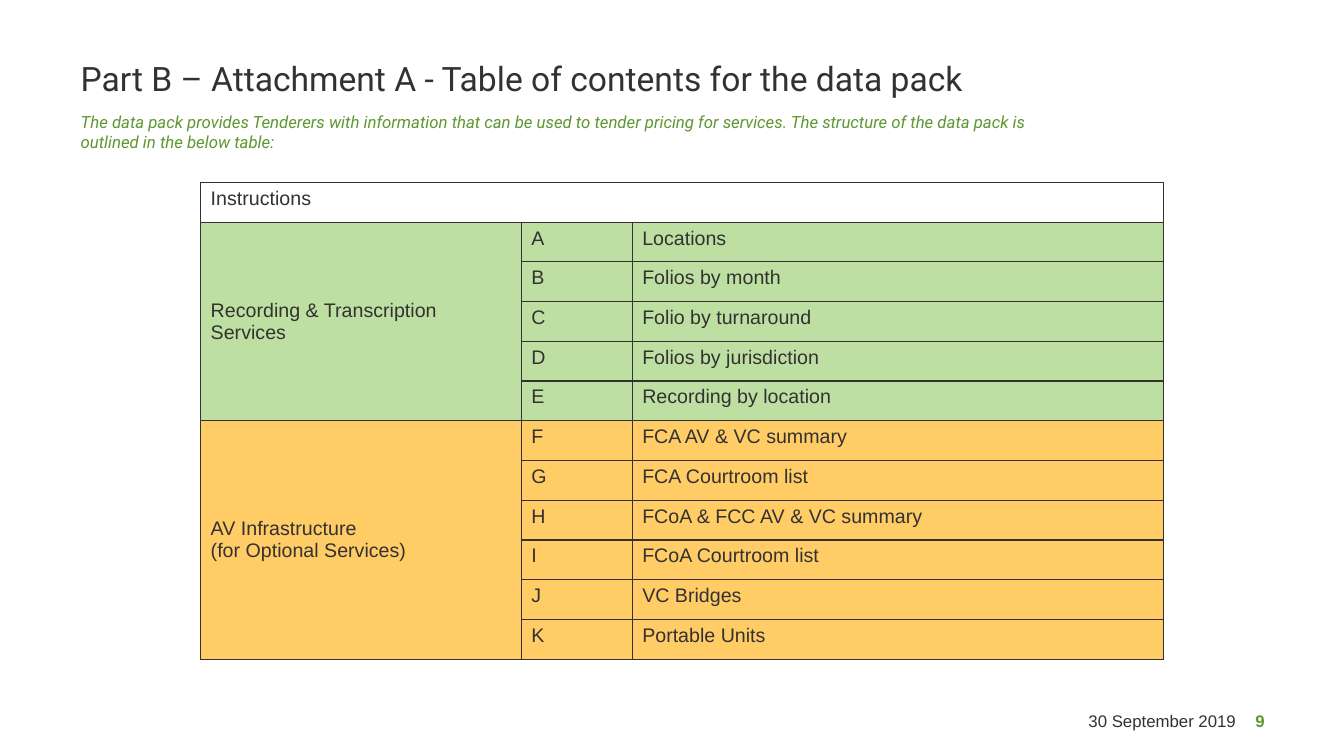
from pptx import Presentation
from pptx.dml.color import RGBColor
from pptx.enum.text import MSO_ANCHOR as Anchor, MSO_AUTO_SIZE as AutoSize, PP_ALIGN as Align
from pptx.oxml import parse_xml
from pptx.oxml.ns import nsdecls
from pptx.util import Inches, Pt

DARK = RGBColor(0x33, 0x31, 0x32)
GREEN = RGBColor(0x5E, 0x97, 0x32)
LIGHT_GREEN = RGBColor(0xBD, 0xE0, 0xA2)
AMBER = RGBColor(0xFF, 0xCC, 0x66)
WHITE = RGBColor(0xFF, 0xFF, 0xFF)

TABLE_HEIGHT = 4.73
COLUMN_WIDTHS = (3.18, 1.1, 5.27)
SECTIONS = [
    ("Recording & Transcription Services", LIGHT_GREEN, [
        "Locations", "Folios by month", "Folio by turnaround",
        "Folios by jurisdiction", "Recording by location"]),
    ("AV Infrastructure\n(for Optional Services)", AMBER, [
        "FCA AV & VC summary", "FCA Courtroom list", "FCoA & FCC AV & VC summary",
        "FCoA Courtroom list", "VC Bridges", "Portable Units"]),
]


def write_text(frame, text, size=12, font="Arial", color=DARK, bold=False,
               italic=False, align=Align.LEFT, anchor=Anchor.TOP, spacing=None):
    frame.text = text
    frame.vertical_anchor = anchor
    for para in frame.paragraphs:
        para.alignment = align
        para.line_spacing = spacing
        for span in para.runs:
            span.font.name = font
            span.font.size = Pt(size)
            span.font.bold = bold
            span.font.italic = italic
            span.font.color.rgb = color


def set_frame(frame, right=0):
    frame.word_wrap = True
    frame.auto_size = AutoSize.NONE
    frame.margin_left = frame.margin_top = frame.margin_bottom = 0
    frame.margin_right = Inches(right)


def add_title(page, text):
    title = page.shapes.title
    title.left, title.top = Inches(0.8), Inches(0.41)
    title.width, title.height = Inches(9.56), Inches(0.57)
    set_frame(title.text_frame)
    write_text(title.text_frame, text, size=24, font="Roboto",
               anchor=Anchor.BOTTOM, spacing=0.9)


def add_text(page, text, left, top, width, height, right=0, **style):
    box = page.shapes.add_textbox(Inches(left), Inches(top), Inches(width), Inches(height))
    set_frame(box.text_frame, right)
    write_text(box.text_frame, text, **style)


def add_borders(cell):
    properties = cell._tc.get_or_add_tcPr()
    for side in ("lnL", "lnR", "lnT", "lnB"):
        properties.append(parse_xml(
            f'<a:{side} {nsdecls("a")} w="{Pt(1)}"><a:solidFill>'
            f'<a:srgbClr val="{DARK}"/></a:solidFill></a:{side}>'))


def fill_cell(cell, text, color, anchor=Anchor.TOP):
    write_text(cell.text_frame, text, size=14)
    cell.vertical_anchor = anchor
    cell.fill.solid()
    cell.fill.fore_color.rgb = color


def add_contents_table(page):
    row_count = 1 + sum(len(items) for _, _, items in SECTIONS)
    table = page.shapes.add_table(
        row_count, len(COLUMN_WIDTHS), Inches(1.99), Inches(1.81),
        Inches(sum(COLUMN_WIDTHS)), Inches(TABLE_HEIGHT)).table
    for column, width in zip(table.columns, COLUMN_WIDTHS):
        column.width = Inches(width)
    for row in table.rows:
        row.height = Inches(TABLE_HEIGHT / row_count)
    for cell in table.iter_cells():
        add_borders(cell)

    table.cell(0, 0).merge(table.cell(0, 2))
    fill_cell(table.cell(0, 0), "Instructions", WHITE)
    first = 1
    for heading, color, items in SECTIONS:
        table.cell(first, 0).merge(table.cell(first + len(items) - 1, 0))
        fill_cell(table.cell(first, 0), heading, color, anchor=Anchor.MIDDLE)
        for row, item in enumerate(items, first):
            fill_cell(table.cell(row, 1), chr(ord("A") + row - 1), color)
            fill_cell(table.cell(row, 2), item, color)
        first += len(items)


def main():
    deck = Presentation()
    deck.slide_width, deck.slide_height = Inches(13.33), Inches(7.5)
    page = deck.slides.add_slide(deck.slide_layouts[5])
    add_title(page, "Part B – Attachment A - Table of contents for the data pack")
    add_text(page, "The data pack provides Tenderers with information that can be used to "
             "tender pricing for services. The structure of the data pack is outlined in "
             "the below table:", 0.8, 1.11, 9.56, 0.57,
             font="Roboto", color=GREEN, italic=True)
    add_contents_table(page)
    add_text(page, "30 September 2019", 9.34, 6.95, 3, 0.4, right=0.08,
             align=Align.RIGHT, anchor=Anchor.MIDDLE)
    add_text(page, "9", 12.45, 7.05, 0.52, 0.2, color=GREEN, bold=True)
    deck.save("out.pptx")


if __name__ == "__main__":
    main()
